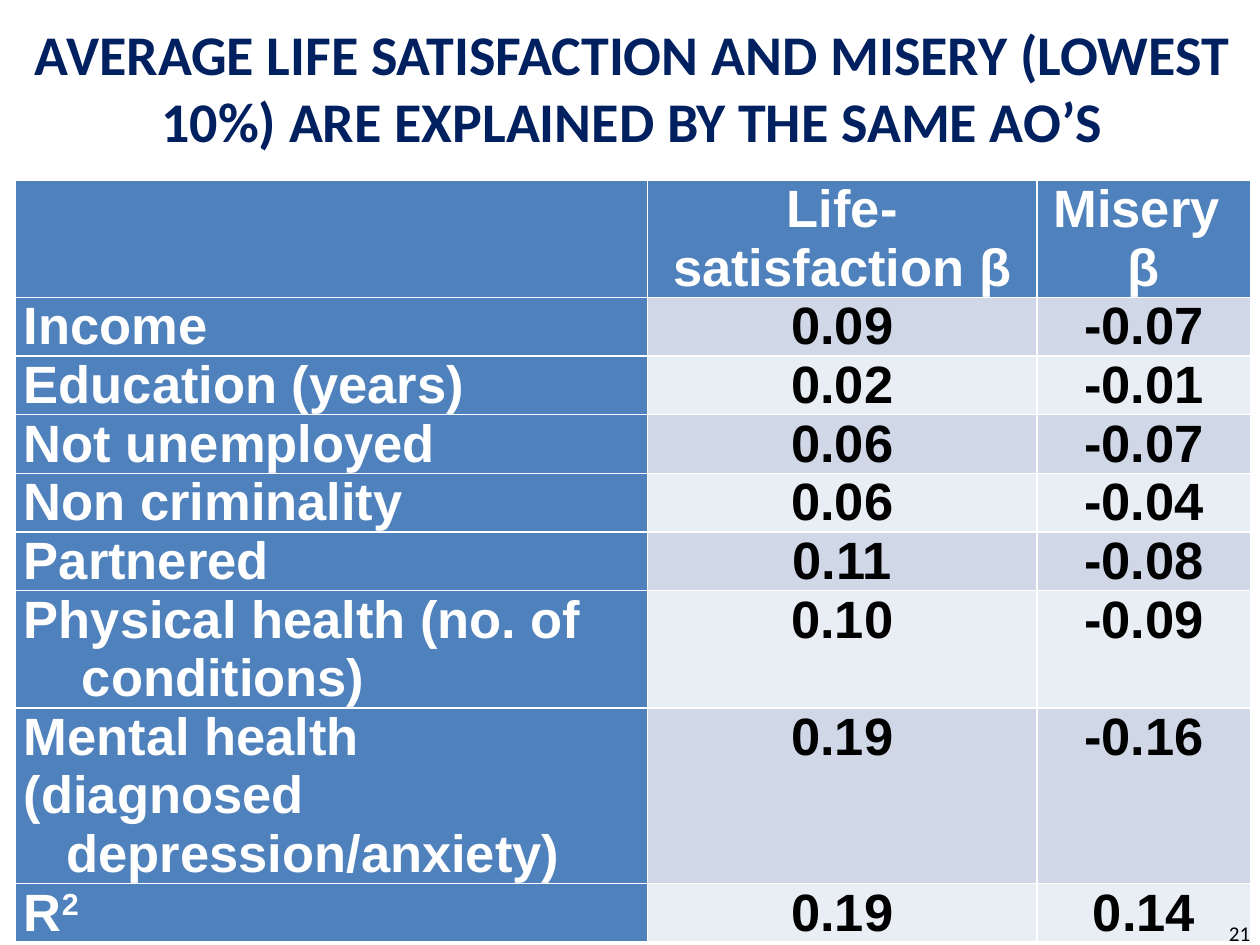
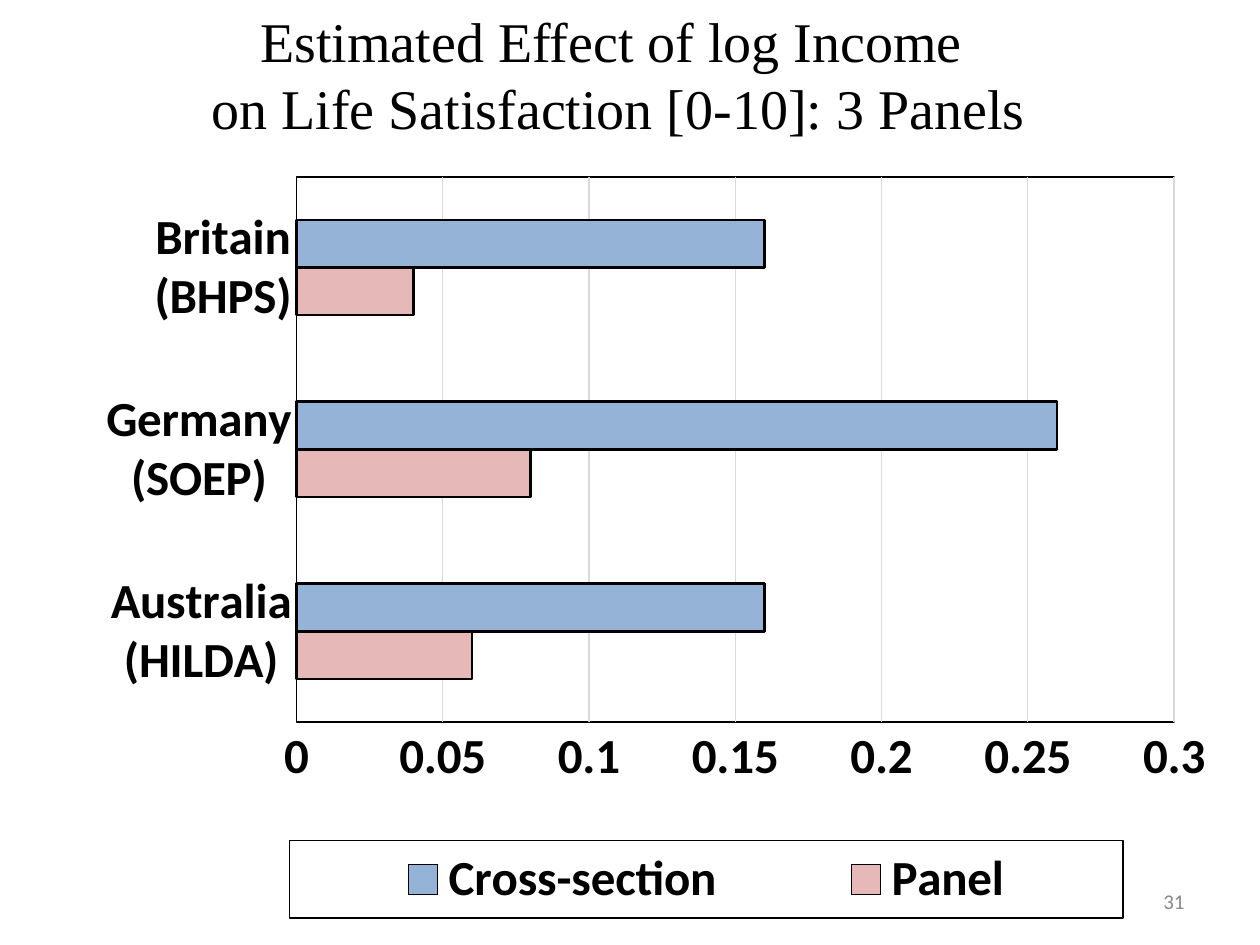
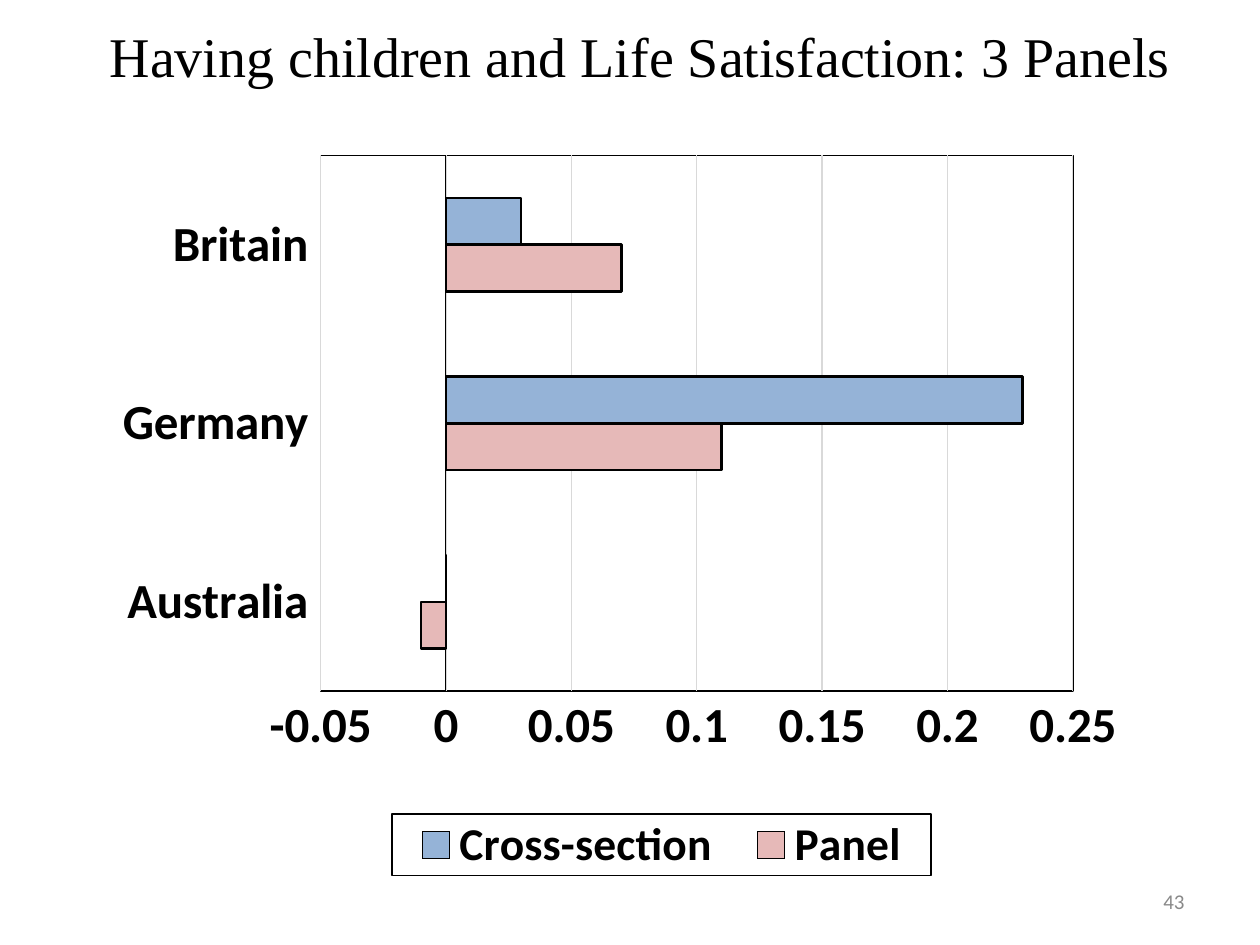
from lxml import etree
from pptx import Presentation
from pptx import util as u
from pptx.chart.data import CategoryChartData
from pptx.dml.color import RGBColor
from pptx.enum import chart as charts, text
from pptx.oxml import parse_xml
from pptx.oxml.ns import nsdecls, qn

Inches, Pt = u.Inches, u.Pt

BLACK = RGBColor(0x00, 0x00, 0x00)
WHITE = RGBColor(0xFF, 0xFF, 0xFF)
NAVY = RGBColor(0x00, 0x20, 0x60)
GREY = RGBColor(0x89, 0x89, 0x89)
GRID = RGBColor(0xD9, 0xD9, 0xD9)
TABLE_BLUE = RGBColor(0x4F, 0x81, 0xBD)
BANDS = [RGBColor(0xD0, 0xD8, 0xE8), RGBColor(0xE9, 0xED, 0xF4)]
SERIES_COLORS = [RGBColor(0xE6, 0xB9, 0xB8), RGBColor(0x95, 0xB3, 0xD7)]

LINE_HEIGHT = 0.46  # one line of table text
NUMBER_BOX = (7.17, 6.95, 2.33, 0.4)

# Label lines as (text, indent), then the two coefficients
COEFFICIENTS = [
    ([("Income", 0)], "0.09", "-0.07"),
    ([("Education (years)", 0)], "0.02", "-0.01"),
    ([("Not unemployed", 0)], "0.06", "-0.07"),
    ([("Non criminality", 0)], "0.06", "-0.04"),
    ([("Partnered", 0)], "0.11", "-0.08"),
    ([("Physical health (no. of", 0), ("conditions)", 0.46)], "0.10", "-0.09"),
    ([("Mental health (diagnosed", 0), ("depression/anxiety)", 0.34)],
     "0.19", "-0.16"),
    ([("R", 0)], "0.19", "0.14"),
]


def style_font(font, size, color=BLACK, name="Calibri", bold=False):
    font.size, font.name, font.bold = Pt(size), name, bold
    font.color.rgb = color


def write_lines(frame, lines, alignment, **style):
    """Fill a text frame with one paragraph for each line."""
    for index, line in enumerate(lines):
        paragraph = frame.add_paragraph() if index else frame.paragraphs[0]
        paragraph.text = line
        paragraph.alignment = alignment
        style_font(paragraph.font, **style)


def add_titled_slide(presentation, lines, box, anchor=text.MSO_ANCHOR.TOP,
                     **style):
    slide = presentation.slides.add_slide(presentation.slide_layouts[5])
    title = slide.shapes.title
    title.left, title.top, title.width, title.height = map(Inches, box)
    frame = title.text_frame
    frame.auto_size = text.MSO_AUTO_SIZE.NONE
    frame.vertical_anchor = anchor
    style = {"size": 32, "name": "Times New Roman"} | style
    write_lines(frame, lines, text.PP_ALIGN.CENTER, **style)
    return slide


def add_slide_number(slide, number, box=NUMBER_BOX, color=GREY):
    frame = slide.shapes.add_textbox(*map(Inches, box)).text_frame
    frame.word_wrap = True
    frame.vertical_anchor = text.MSO_ANCHOR.MIDDLE
    write_lines(frame, [number], text.PP_ALIGN.RIGHT, size=12, color=color)


def fill_cell(cell, lines, fill, color, alignment=text.PP_ALIGN.CENTER):
    cell.margin_left = cell.margin_right = Inches(0.07)
    cell.margin_top = cell.margin_bottom = 0
    cell.fill.solid()
    cell.fill.fore_color.rgb = fill
    write_lines(cell.text_frame, lines, alignment,
                size=30, color=color, name="Arial", bold=True)


def add_coefficient_table(slide):
    line_counts = [2, 1, 1, 1, 1, 1, 2, 3, 1]
    table = slide.shapes.add_table(
        len(line_counts), 3, Inches(0.12), Inches(1.43), Inches(9.81),
        Inches(LINE_HEIGHT * sum(line_counts))).table
    table.first_col = True
    for column, width in zip(table.columns, (5.02, 3.09, 1.7)):
        column.width = Inches(width)
    for row, count in zip(table.rows, line_counts):
        row.height = Inches(LINE_HEIGHT * count)

    headers = [[""], ["Life-satisfaction β"], ["Misery ", "β"]]
    for column, lines in enumerate(headers):
        fill_cell(table.cell(0, column), lines, TABLE_BLUE, WHITE)

    for row, (label, *values) in enumerate(COEFFICIENTS, start=1):
        label_cell = table.cell(row, 0)
        fill_cell(label_cell, [line for line, _ in label], TABLE_BLUE, WHITE,
                  text.PP_ALIGN.LEFT)
        for paragraph, (_, indent) in zip(label_cell.text_frame.paragraphs,
                                          label):
            if indent:
                properties = paragraph._p.get_or_add_pPr()
                properties.set("marL", str(Inches(indent)))
        for column, value in enumerate(values, start=1):
            fill_cell(table.cell(row, column), [value],
                      BANDS[(row - 1) % 2], BLACK)

    # Superscript of R²
    exponent = label_cell.text_frame.paragraphs[0].add_run()
    exponent.text = "2"
    exponent._r.get_or_add_rPr().set("baseline", "30000")


def manual_layout(box, inner=False):
    """Layout element from left, top, width, height as chart fractions."""
    layout = parse_xml(f"<c:layout {nsdecls('c')}><c:manualLayout/></c:layout>")
    settings = [("layoutTarget", "inner")] if inner else []
    settings += [("xMode", "edge"), ("yMode", "edge")]
    settings += zip("xywh", map(str, box))
    for tag, value in settings:
        etree.SubElement(layout[0], qn(f"c:{tag}"), val=value)
    return layout


def outlined_white():
    return parse_xml(
        f"<c:spPr {nsdecls('c', 'a')}>"
        '<a:solidFill><a:srgbClr val="FFFFFF"/></a:solidFill>'
        '<a:ln w="12700"><a:solidFill><a:srgbClr val="000000"/></a:solidFill>'
        "</a:ln></c:spPr>")


def add_bar_chart(slide, box, categories, panel, cross_section, value_range,
                  plot_box, legend_box, legend_size, legend_position,
                  label_position):
    data = CategoryChartData()
    data.categories = categories
    data.add_series("Panel", panel)
    data.add_series("Cross-section", cross_section)
    chart = slide.shapes.add_chart(charts.XL_CHART_TYPE.BAR_CLUSTERED,
                                   *map(Inches, box), data).chart
    chart.has_title = False
    style_font(chart.font, 10)

    # Bars
    plot = chart.plots[0]
    plot.gap_width = 182
    plot.vary_by_categories = False
    for series, color in zip(plot.series, SERIES_COLORS):
        series.invert_if_negative = False
        series.format.fill.solid()
        series.format.fill.fore_color.rgb = color
        series.format.line.color.rgb = BLACK
        series.format.line.width = Pt(1.5)

    # Axes
    category_axis, value_axis = chart.category_axis, chart.value_axis
    for axis in (category_axis, value_axis):
        axis.major_tick_mark = axis.minor_tick_mark = charts.XL_TICK_MARK.NONE
        style_font(axis.tick_labels.font, 28, bold=True)
    category_axis.tick_label_position = label_position
    category_axis.format.line.color.rgb = BLACK
    category_axis.format.line.width = Pt(0.5)
    value_axis.minimum_scale, value_axis.maximum_scale = value_range
    value_axis.major_unit = 0.05
    value_axis.format.line.fill.background()
    grid_line = value_axis.major_gridlines.format.line
    grid_line.color.rgb = GRID
    grid_line.width = Pt(0.75)

    # Legend
    chart.has_legend = True
    legend = chart.legend
    legend.position = legend_position
    legend.include_in_layout = False
    style_font(legend.font, legend_size, bold=True)
    legend_xml = legend._element
    legend_xml.find(qn("c:legendPos")).addnext(manual_layout(legend_box))
    legend_xml.find(qn("c:txPr")).addprevious(outlined_white())

    # Plot area
    area = chart._chartSpace.chart.plotArea
    for layout in area.findall(qn("c:layout")):
        area.remove(layout)
    area.insert(0, manual_layout(plot_box, inner=True))
    area.append(outlined_white())


def main():
    presentation = Presentation()
    presentation.slide_width, presentation.slide_height = Inches(10), Inches(7.5)

    # Table of coefficients
    slide = add_titled_slide(
        presentation,
        ["AVERAGE LIFE SATISFACTION AND MISERY (LOWEST 10%) "
         "ARE EXPLAINED BY THE SAME AO’S"],
        (0.02, 0.14, 10, 1.09), text.MSO_ANCHOR.MIDDLE,
        name="Calibri", color=NAVY, bold=True)
    add_coefficient_table(slide)
    add_slide_number(slide, "21", (7.77, 7.21, 2.25, 0.4), BLACK)

    # Effect of income
    slide = add_titled_slide(
        presentation,
        ["Estimated Effect of log Income ",
         "on Life Satisfaction [0-10]: 3 Panels"],
        (0, 0, 9.82, 1.18))
    add_slide_number(slide, "31")
    add_bar_chart(
        slide, (0.46, 1.18, 9.19, 6.17),
        ["Australia (HILDA)", "Germany (SOEP)", "Britain (BHPS)"],
        panel=(0.06, 0.08, 0.04), cross_section=(0.16, 0.26, 0.16),
        value_range=(0, 0.3),
        plot_box=(0.206, 0.036, 0.758, 0.702),
        legend_box=(0.2, 0.89, 0.72, 0.1), legend_size=28,
        legend_position=charts.XL_LEGEND_POSITION.BOTTOM,
        label_position=charts.XL_TICK_LABEL_POSITION.NEXT_TO_AXIS)

    # Effect of children
    slide = add_titled_slide(
        presentation, ["Having children and Life Satisfaction: 3 Panels"],
        (0.37, 0.12, 9.43, 0.64))
    add_slide_number(slide, "43")
    add_bar_chart(
        slide, (0.58, 1.07, 8.73, 6.06),
        ["Australia", "Germany", "Britain"],
        panel=(-0.01, 0.11, 0.07), cross_section=(0, 0.23, 0.03),
        value_range=(-0.05, 0.25),
        plot_box=(0.225, 0.027, 0.684, 0.702),
        legend_box=(0.29, 0.89, 0.49, 0.08), legend_size=26,
        legend_position=charts.XL_LEGEND_POSITION.RIGHT,
        label_position=charts.XL_TICK_LABEL_POSITION.LOW)

    presentation.save("out.pptx")


if __name__ == "__main__":
    main()
